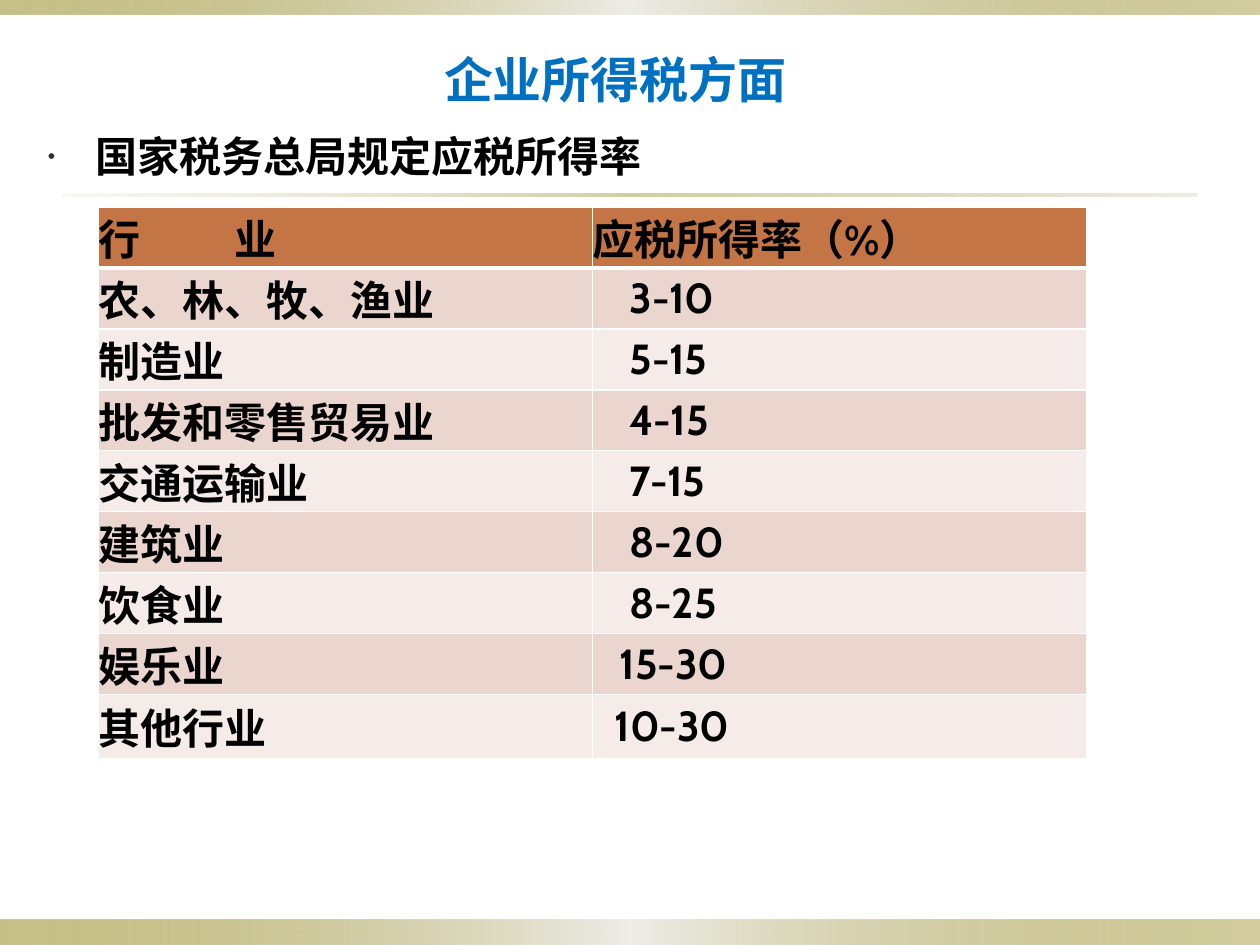
from pptx import Presentation, util as u
from pptx.dml import color
from pptx.enum import shapes, text
from pptx.oxml import parse_xml
from pptx.oxml.ns import nsdecls

THEME = {
    "font": "Cabin", "title_size": 28, "text_size": 24,
    "title": "0070C0", "text": "000000", "bullet": "2F2F2F", "border": "FFFFFF",
    "header": "C47546", "stripes": ("F5ECE9", "EAD6CF"),
    "band": (("918415", 50), ("EEEDE8", 100), ("918415", 40)),
    "divider": (("DCD9CC", 20), ("918415", 40), ("DCD9CC", 50)),
}


def element(xml):
    return parse_xml(xml.replace(">", f" {nsdecls('a')}>", 1))


def write(paragraph, words, size, colour):
    run = paragraph.add_run()
    run.text = words
    style = {"name": THEME["font"], "size": u.Pt(size), "bold": True}
    for key, value in style.items():
        setattr(run.font, key, value)
    run.font.color.rgb = color.RGBColor.from_string(colour)


prs = Presentation()
prs.slide_width, prs.slide_height = u.Cm(25.4), u.Cm(19.05)
slide = prs.slides.add_slide(prs.slide_layouts[1])

bands = [
    (0, 18.54, 25.4, 0.51, "band"),
    (0, 0, 25.4, 0.3, "band"),
    (1.27, 3.91, 22.86, 0.05, "divider"),
]
for order, (*box, kind) in enumerate(bands):
    band = slide.shapes.add_shape(shapes.MSO_SHAPE.RECTANGLE, *map(u.Cm, box))
    band.shadow.inherit = False
    band.line.fill.background()
    stops = "".join(
        f'<a:gs pos="{i * 50000}"><a:srgbClr val="{rgb}"><a:alpha val="{alpha * 1000}"/></a:srgbClr></a:gs>'
        for i, (rgb, alpha) in enumerate(THEME[kind])
    )
    band.element.spPr.find("./{*}prstGeom").addnext(element(
        f'<a:gradFill><a:gsLst>{stops}</a:gsLst><a:lin ang="0" scaled="0"/></a:gradFill>'))
    slide.shapes.element.insert(2 + order, band.element)

heading, body = slide.shapes.title, slide.placeholders[1]
frames = [
    (heading, (1.19, 0.79, 22.43, 1.6), "企业所得税方面", "title"),
    (body, (0.71, 2.51, 24.49, 16.05), "国家税务总局规定应税所得率", "text"),
]
for holder, box, words, role in frames:
    for side, value in zip(("left", "top", "width", "height"), box):
        setattr(holder, side, u.Cm(value))
    write(holder.text_frame.paragraphs[0], words, THEME[f"{role}_size"], THEME[role])
heading.text_frame.paragraphs[0].alignment = text.PP_ALIGN.CENTER

bullet = body.text_frame.paragraphs[0]._p.get_or_add_pPr()
bullet.set("marL", str(u.Cm(0.96)))
bullet.set("indent", str(-u.Cm(0.96)))
for xml in (
    f'<a:buClr><a:srgbClr val="{THEME["bullet"]}"/></a:buClr>',
    '<a:buSzPct val="50000"></a:buSzPct>',
    '<a:buChar char="•"></a:buChar>',
):
    bullet.append(element(xml))

rates = [
    ("行\t业", "应税所得率（%）", 0),
    ("农、林、牧、渔业", "3-10", 0.75),
    ("制造业", "5-15", 0.75),
    ("批发和零售贸易业", "4-15", 0.75),
    ("交通运输业", "7-15", 0.75),
    ("建筑业", "8-20", 0.75),
    ("饮食业", "8-25", 0.75),
    ("娱乐业", "15-30", 0.55),
    ("其他行业", "10-30", 0.45),
]
rate_table = slide.shapes.add_table(
    len(rates), 2, u.Cm(1.98), u.Cm(4.17), u.Cm(19.92), u.Cm(10.08)).table
for row, (industry, rate, inset) in enumerate(rates):
    for column, (words, left) in enumerate(((industry, 0), (rate, inset))):
        cell = rate_table.cell(row, column)
        last_rate = row == len(rates) - 1 and column == 1
        pad = u.Cm(0.13 if last_rate else 0)
        anchor = text.MSO_ANCHOR.TOP if last_rate else text.MSO_ANCHOR.MIDDLE
        layout = {"margin_left": u.Cm(left), "margin_right": 0, "margin_top": pad,
                  "margin_bottom": pad, "vertical_anchor": anchor}
        for key, value in layout.items():
            setattr(cell, key, value)
        widths = {"L": 1, "R": 1, "T": 3 if row == 1 else 1, "B": 3 if row == 0 else 1}
        for side, width in widths.items():
            cell._tc.get_or_add_tcPr().append(element(
                f'<a:ln{side} w="{u.Pt(width)}"><a:solidFill><a:srgbClr val="{THEME["border"]}"/>'
                f'</a:solidFill></a:ln{side}>'))
        cell.fill.solid()
        fill = THEME["stripes"][row % 2] if row else THEME["header"]
        cell.fill.fore_color.rgb = color.RGBColor.from_string(fill)
        write(cell.text_frame.paragraphs[0], words, THEME["text_size"], THEME["text"])

industry_header = rate_table.cell(0, 0).text_frame.paragraphs[0]._p.get_or_add_pPr()
industry_header.append(element(
    f'<a:tabLst><a:tab pos="{u.Cm(2.75)}" algn="l"/></a:tabLst>'))

prs.save("out.pptx")
